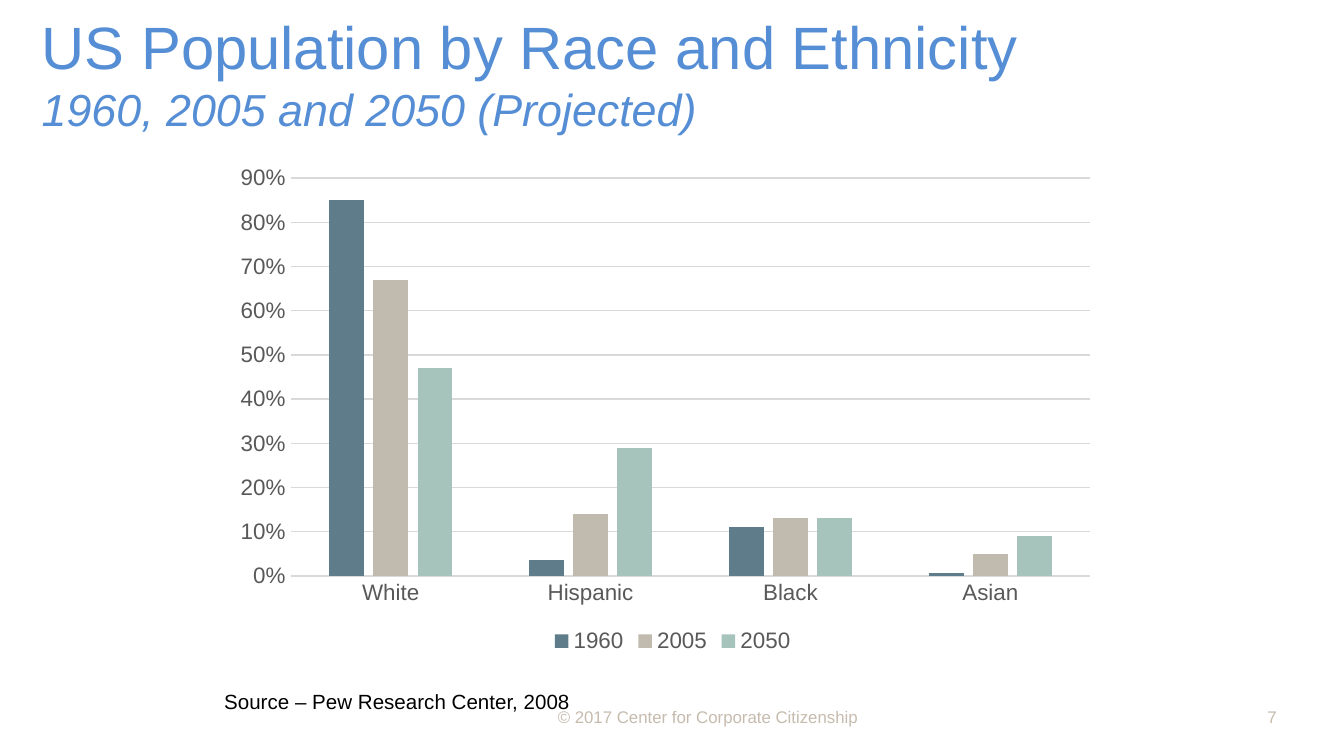
from lxml import etree
from pptx import Presentation
from pptx.chart.data import CategoryChartData
from pptx.dml.color import RGBColor
from pptx.enum.chart import XL_CHART_TYPE, XL_LEGEND_POSITION, XL_TICK_MARK
from pptx.enum.text import MSO_ANCHOR, MSO_AUTO_SIZE, PP_ALIGN
from pptx.oxml.ns import qn
from pptx.util import Inches, Pt

COLUMNS = XL_CHART_TYPE.COLUMN_CLUSTERED
BOTTOM = XL_LEGEND_POSITION.BOTTOM
NO_TICK = XL_TICK_MARK.NONE
TOP, MIDDLE = MSO_ANCHOR.TOP, MSO_ANCHOR.MIDDLE
LEFT, RIGHT = PP_ALIGN.LEFT, PP_ALIGN.RIGHT
NO_FIT = MSO_AUTO_SIZE.NONE

FONT = "Arial"
BLUE, TAUPE, BLACK = "558ED5", "C6BBAE", "000000"
LABEL, GRID = "595959", "D9D9D9"

GROUPS = ["White", "Hispanic", "Black", "Asian"]
YEARS = {
    "1960": ([0.85, 0.035, 0.11, 0.006], "5E7C8A"),
    "2005": ([0.67, 0.14, 0.13, 0.05], "C0BBAE"),
    "2050": ([0.47, 0.29, 0.13, 0.09], "A6C4BC"),
}


def rgb(color):
    return RGBColor.from_string(color)


def set_font(font, size, color, italic=None):
    font.name, font.size, font.italic = FONT, Pt(size), italic
    font.color.rgb = rgb(color)


def set_line(line, color):
    line.color.rgb = rgb(color)
    line.width = Pt(0.75)


class Deck:
    def __init__(self, width, height):
        self.prs = Presentation()
        self.prs.slide_width, self.prs.slide_height = Inches(width), Inches(height)
        self.s = self.prs.slides.add_slide(self.prs.slide_layouts[5])

    def box(self, x, y, w, h):
        """Turn percentages of the slide's size into lengths."""
        width, height = self.prs.slide_width, self.prs.slide_height
        return [int(share * side / 100)
                for share, side in ((x, width), (y, height), (w, width), (h, height))]

    def title(self, area, lines):
        sp = self.s.shapes.title
        sp.left, sp.top, sp.width, sp.height = self.box(*area)
        tf = sp.text_frame
        tf.auto_size, tf.vertical_anchor, tf.word_wrap = NO_FIT, TOP, False
        tf.text = "\n".join(text for text, _, _ in lines)
        for p, (_, size, italic) in zip(tf.paragraphs, lines):
            p.alignment = LEFT
            set_font(p.font, size, BLUE, italic)
        sp.element.getparent().append(sp.element)  # in front of the chart

    def text(self, area, text, size, color, align=LEFT):
        tf = self.s.shapes.add_textbox(*self.box(*area)).text_frame
        p = tf.paragraphs[0]
        p.text, p.alignment = text, align
        set_font(p.font, size, color)
        return tf

    def footer(self, area, text, align=LEFT):
        tf = self.text(area, text, 9, TAUPE, align)
        tf.word_wrap, tf.vertical_anchor = True, MIDDLE
        tf.margin_left = tf.margin_right = tf.margin_top = tf.margin_bottom = 0

    def column_chart(self, area, groups, series, plot_area):
        data = CategoryChartData(number_format="0%")
        data.categories = groups
        for name, (values, _) in series.items():
            data.add_series(name, values)
        chart = self.s.shapes.add_chart(COLUMNS, *self.box(*area), data).chart
        set_font(chart.font, 10, BLACK)
        chart.has_title = False
        chart.has_legend = True
        chart.legend.position = BOTTOM
        chart.legend.include_in_layout = False
        set_font(chart.legend.font, 12, LABEL)

        plot = chart.plots[0]
        plot.gap_width, plot.overlap, plot.vary_by_categories = 219, -27, False
        for bars, (_, color) in zip(plot.series, series.values()):
            bars.format.fill.solid()
            bars.format.fill.fore_color.rgb = rgb(color)

        for axis in (chart.category_axis, chart.value_axis):
            axis.major_tick_mark = axis.minor_tick_mark = NO_TICK
            set_font(axis.tick_labels.font, 12, LABEL)
        set_line(chart.category_axis.format.line, GRID)
        axis = chart.value_axis
        axis.minimum_scale, axis.maximum_scale, axis.major_unit = 0, 0.9, 0.1
        axis.tick_labels.number_format = "0%"
        axis.tick_labels.number_format_is_linked = False
        axis.format.line.fill.background()
        set_line(axis.major_gridlines.format.line, GRID)
        self.place_plot(chart, plot_area)

    def place_plot(self, chart, plot_area):
        """Fix the inner plot area, given as percentages of the chart."""
        parent = chart.element.find(".//" + qn("c:plotArea"))
        for old in parent.findall(qn("c:layout")):
            parent.remove(old)
        layout = etree.Element(qn("c:layout"))
        manual = etree.SubElement(layout, qn("c:manualLayout"))
        settings = [("layoutTarget", "inner"), ("xMode", "edge"), ("yMode", "edge")]
        shares = [share / 100 for share in plot_area]
        for tag, value in settings + list(zip("xywh", shares)):
            etree.SubElement(manual, qn("c:" + tag), val=str(value))
        parent.insert(0, layout)


def main():
    deck = Deck(10, 10 * 9 / 16)
    deck.footer((41.5, 92.2, 22.8, 5.3), "© 2017 Center for Corporate Citizenship")
    deck.footer((71.7, 92.2, 23.3, 5.3), "7", RIGHT)
    deck.column_chart((16.7, 4.6, 66.7, 82.5), GROUPS, YEARS, (7.4, 23, 89.2, 63.8))
    source = deck.text((15.7, 90.3, 28, 5.2), "Source – Pew Research Center, 2008", 11, BLACK)
    source.word_wrap = False
    deck.title((2.1, 0.4, 75.3, 18.5), [
        ("US Population by Race and Ethnicity", 32, False),
        ("1960, 2005 and 2050 (Projected)", 24, True),
    ])
    deck.prs.save("out.pptx")


if __name__ == "__main__":
    main()
